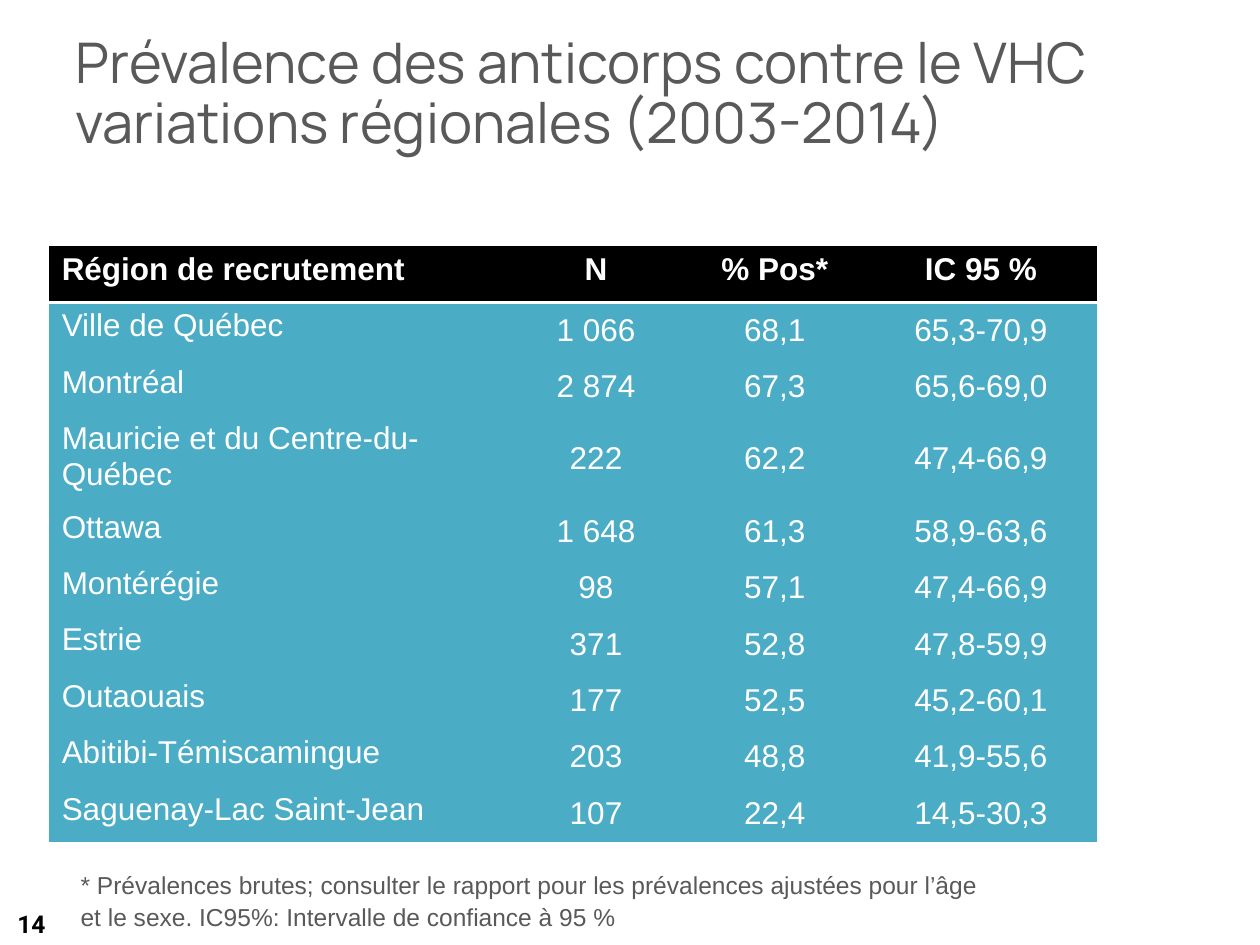
from lxml import etree
from pptx import Presentation
from pptx.dml.color import RGBColor
from pptx.enum.text import MSO_ANCHOR, PP_ALIGN
from pptx.oxml.ns import qn
from pptx.util import Inches, Pt

LEFT, CENTER, RIGHT = PP_ALIGN.LEFT, PP_ALIGN.CENTER, PP_ALIGN.RIGHT
TOP, MIDDLE = MSO_ANCHOR.TOP, MSO_ANCHOR.MIDDLE
WHITE, BLACK, GREY, TEAL = "FFFFFF", "000000", "595959", "4BACC6"
NO_STYLE = "{2D5ABB26-0587-4C30-8999-92F81FD0307C}"
COLUMN_WIDTHS = (3.63, 1.42, 1.42, 1.85)
ROW_HEIGHT = 0.448
REGIONS = [
    ("Région de recrutement", "N", "% Pos*", "IC 95 %"),
    ("Ville de Québec", "1 066", "68,1", "65,3-70,9"),
    ("Montréal", "2 874", "67,3", "65,6-69,0"),
    ("Mauricie et du Centre-du-Québec", "222", "62,2", "47,4-66,9"),
    ("Ottawa", "1 648", "61,3", "58,9-63,6"),
    ("Montérégie", "98", "57,1", "47,4-66,9"),
    ("Estrie", "371", "52,8", "47,8-59,9"),
    ("Outaouais", "177", "52,5", "45,2-60,1"),
    ("Abitibi-Témiscamingue", "203", "48,8", "41,9-55,6"),
    ("Saguenay-Lac Saint-Jean", "107", "22,4", "14,5-30,3"),
]


def color(hex_code):
    return RGBColor.from_string(hex_code)


def write(frame, text, size=18, font="Arial", ink=WHITE, bold=False,
          align=LEFT, spacing=1.0):
    paragraph = frame.paragraphs[0]
    paragraph.alignment = align
    paragraph.line_spacing = spacing
    run = paragraph.add_run()
    run.text = text
    run.font.size = Pt(size)
    run.font.name = font
    run.font.bold = bold
    run.font.color.rgb = color(ink)


def add_text(slide, box, text, anchor=TOP, indent=0.1, **style):
    frame = slide.shapes.add_textbox(*map(Inches, box)).text_frame
    frame.word_wrap = True
    frame.vertical_anchor = anchor
    frame.margin_left = Inches(indent)
    write(frame, text, **style)


def add_bottom_border(cell, hex_code, width):
    border = etree.Element(qn("a:lnB"), w=str(Pt(width)))
    fill = etree.SubElement(border, qn("a:solidFill"))
    etree.SubElement(fill, qn("a:srgbClr"), val=hex_code)
    cell._tc.get_or_add_tcPr().insert(0, border)


def add_region_table(slide, left, top):
    table = slide.shapes.add_table(
        len(REGIONS), len(COLUMN_WIDTHS), Inches(left), Inches(top),
        Inches(sum(COLUMN_WIDTHS)), Inches(ROW_HEIGHT * len(REGIONS))).table
    table.horz_banding = False
    table._tbl.tblPr.find(qn("a:tableStyleId")).text = NO_STYLE
    for column, width in zip(table.columns, COLUMN_WIDTHS):
        column.width = Inches(width)
    for row_index, region in enumerate(REGIONS):
        header = row_index == 0
        table.rows[row_index].height = Inches(ROW_HEIGHT)
        for column_index, text in enumerate(region):
            cell = table.cell(row_index, column_index)
            label = column_index == 0
            cell.fill.solid()
            cell.fill.fore_color.rgb = color(BLACK if header else TEAL)
            cell.vertical_anchor = TOP if header or label else MIDDLE
            write(cell.text_frame, text, bold=header,
                  align=LEFT if label else CENTER)
            if header:
                add_bottom_border(cell, WHITE, 2)


def main():
    deck = Presentation()
    deck.slide_width, deck.slide_height = Inches(10), Inches(7.5)
    slide = deck.slides.add_slide(deck.slide_layouts[6])
    add_text(slide, (0.5, 0.13, 9, 1.25),
             "Prévalence des anticorps contre le VHC variations régionales (2003-2014)",
             anchor=MIDDLE, size=32, font="Manrope", ink=GREY, spacing=0.9)
    add_text(slide, (-0.02, 7.13, 0.48, 0.4), "14", anchor=MIDDLE, size=14,
             font="Roboto", ink=BLACK, bold=True, align=RIGHT)
    add_region_table(slide, 0.39, 1.95)
    add_text(slide, (0.35, 6.83, 7.54, 0.6),
             "* Prévalences brutes; consulter le rapport pour les prévalences "
             "ajustées pour l’âge et le sexe. IC95%: Intervalle de confiance à 95 %",
             indent=0.29, size=14, ink=GREY, spacing=1.1)
    deck.save("out.pptx")


if __name__ == "__main__":
    main()
